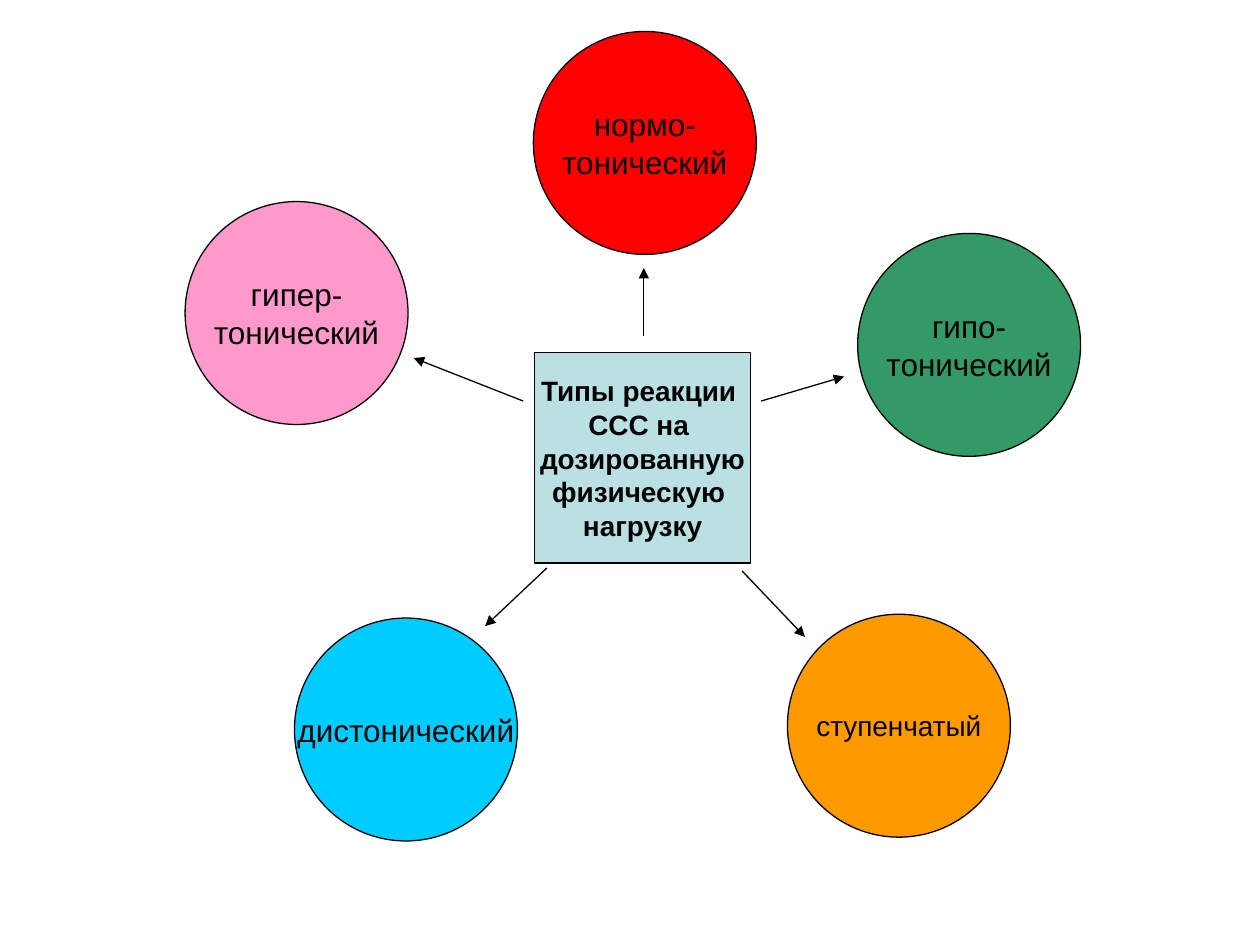
import pptx
import pptx.util
import pptx.dml.color
import pptx.enum.shapes
import pptx.enum.text
import pptx.oxml
import pptx.oxml.ns
from dataclasses import dataclass

Pt = pptx.util.Pt
SHAPE = pptx.enum.shapes.MSO_SHAPE


@dataclass(frozen=True)
class Theme:
    font: str = "Arial"
    ink: str = "000000"
    center: str = "BBE0E3"
    red: str = "FF0000"
    green: str = "339966"
    blue: str = "00CCFF"
    orange: str = "FF9900"
    pink: str = "FF99CC"
    large: int = 18
    small: int = 16
    line: float = 0.75


THEME = Theme()
CIRCLE = 127.4  # diameter

CENTER_TEXT = "Типы реакции \nССС на \nдозированную\nфизическую \nнагрузку"

# Text, fill, type size, circle corner, arrow start, arrow end
REACTIONS = [
    ("нормо-\nтонический", THEME.red, THEME.large,
     (304.8, 18), (367.9, 192), (367.9, 153.2)),
    ("гипо-\nтонический", THEME.green, THEME.large,
     (490.1, 133.4), (434.9, 229.2), (482.4, 215.2)),
    ("дистонический", THEME.blue, THEME.large,
     (168.3, 353.2), (312.5, 324.6), (277.2, 357.8)),
    ("ступенчатый", THEME.orange, THEME.small,
     (450, 351), (424.2, 326.4), (460, 364)),
    ("гипер-\nтонический", THEME.pink, THEME.large,
     (105.8, 115.2), (299, 229.2), (236.4, 204.6)),
]


def rgb(value):
    return pptx.dml.color.RGBColor.from_string(value)


def add_node(slide, kind, box, text, fill, size, bold=False):
    """Place an outlined shape with centred text in the box."""
    sp = slide.shapes.add_shape(kind, *(Pt(v) for v in box))
    sp.shadow.inherit = False
    sp.fill.solid()
    sp.fill.fore_color.rgb = rgb(fill)
    sp.line.color.rgb = rgb(THEME.ink)
    sp.line.width = Pt(THEME.line)
    tf = sp.text_frame
    tf.word_wrap = False
    tf.vertical_anchor = pptx.enum.text.MSO_ANCHOR.MIDDLE
    tf.text = text
    for p in tf.paragraphs:
        p.alignment = pptx.enum.text.PP_ALIGN.CENTER
        for r in p.runs:
            r.font.name = THEME.font
            r.font.size = Pt(size)
            r.font.bold = bold
            r.font.color.rgb = rgb(THEME.ink)


def add_arrow(slide, start, end):
    """Draw a thin line with an arrowhead at its end."""
    line = slide.shapes.add_connector(
        pptx.enum.shapes.MSO_CONNECTOR.STRAIGHT, *(Pt(v) for v in start + end))
    line.line.color.rgb = rgb(THEME.ink)
    line.line.width = Pt(THEME.line)
    ns = pptx.oxml.ns.nsdecls("a")
    line.line._get_or_add_ln().append(
        pptx.oxml.parse_xml(f'<a:tailEnd {ns} type="triangle"/>'))
    line._element.spPr.append(pptx.oxml.parse_xml(f"<a:effectLst {ns}/>"))


def add_reaction_diagram(slide, left, top):
    """Place the central topic, its circles and arrows from the given corner."""
    def shift(point):
        return left + point[0], top + point[1]

    # Central topic
    add_node(slide, SHAPE.RECTANGLE, shift((305.3, 201.6)) + (123.8, 120.2),
             CENTER_TEXT, THEME.center, THEME.small, bold=True)

    # Reaction types around it
    for text, fill, size, corner, start, end in REACTIONS:
        add_node(slide, SHAPE.OVAL, shift(corner) + (CIRCLE, CIRCLE),
                 text, fill, size)
        add_arrow(slide, shift(start), shift(end))


def main():
    prs = pptx.Presentation()
    prs.slide_width, prs.slide_height = Pt(720), Pt(540)
    slide = prs.slides.add_slide(prs.slide_layouts[6])
    add_reaction_diagram(slide, 0, 0)
    prs.save("out.pptx")


if __name__ == "__main__":
    main()
